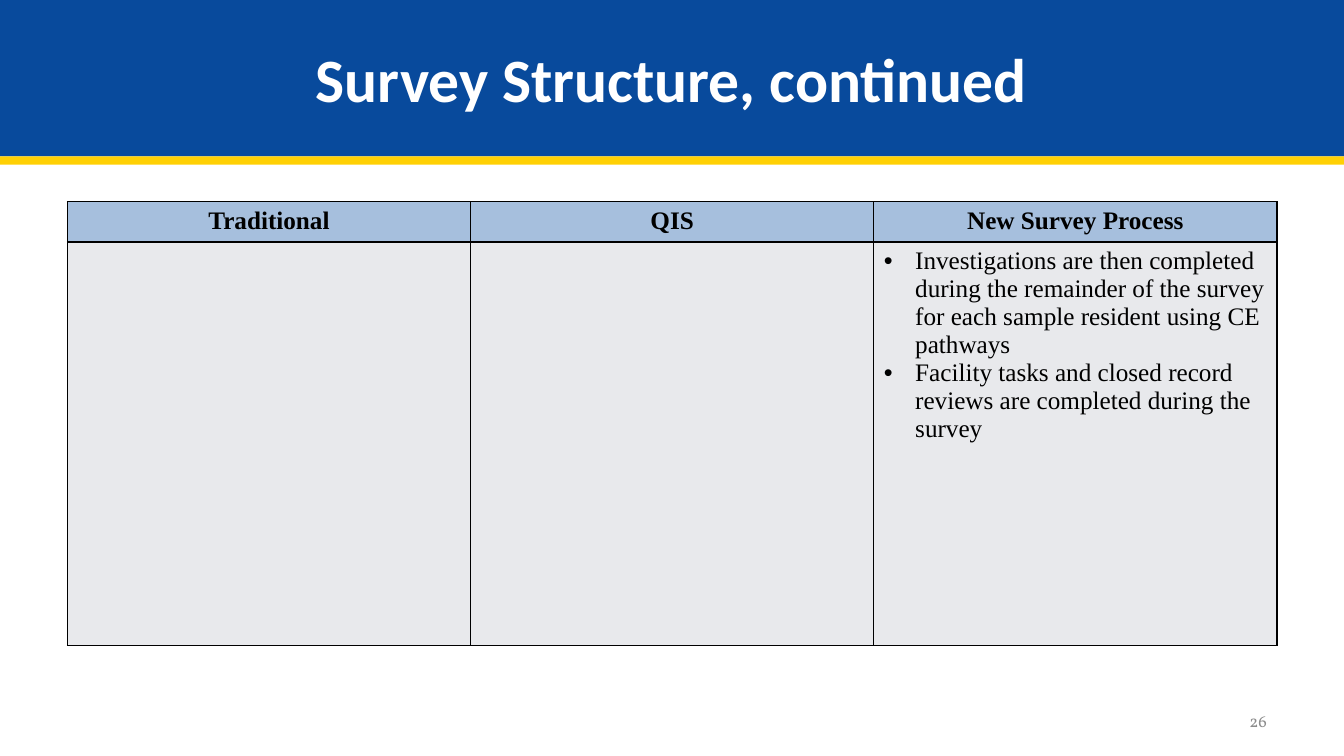
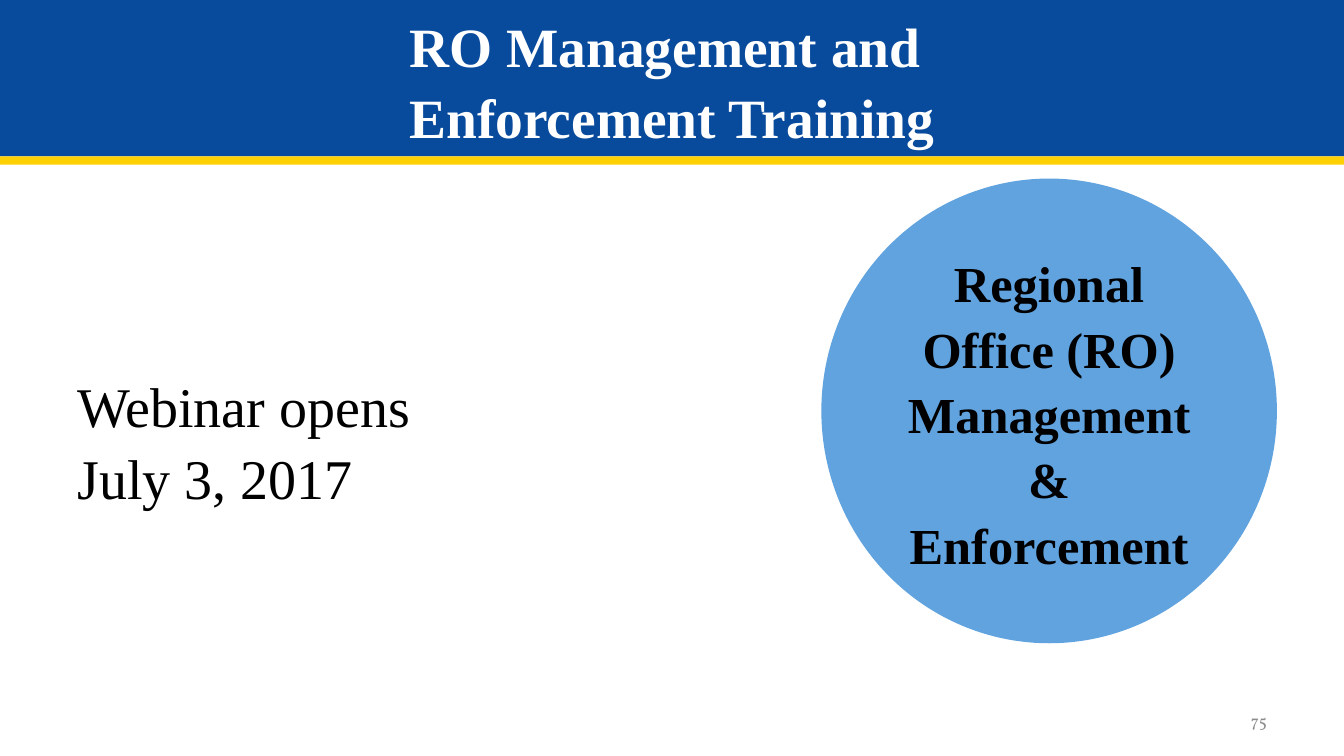
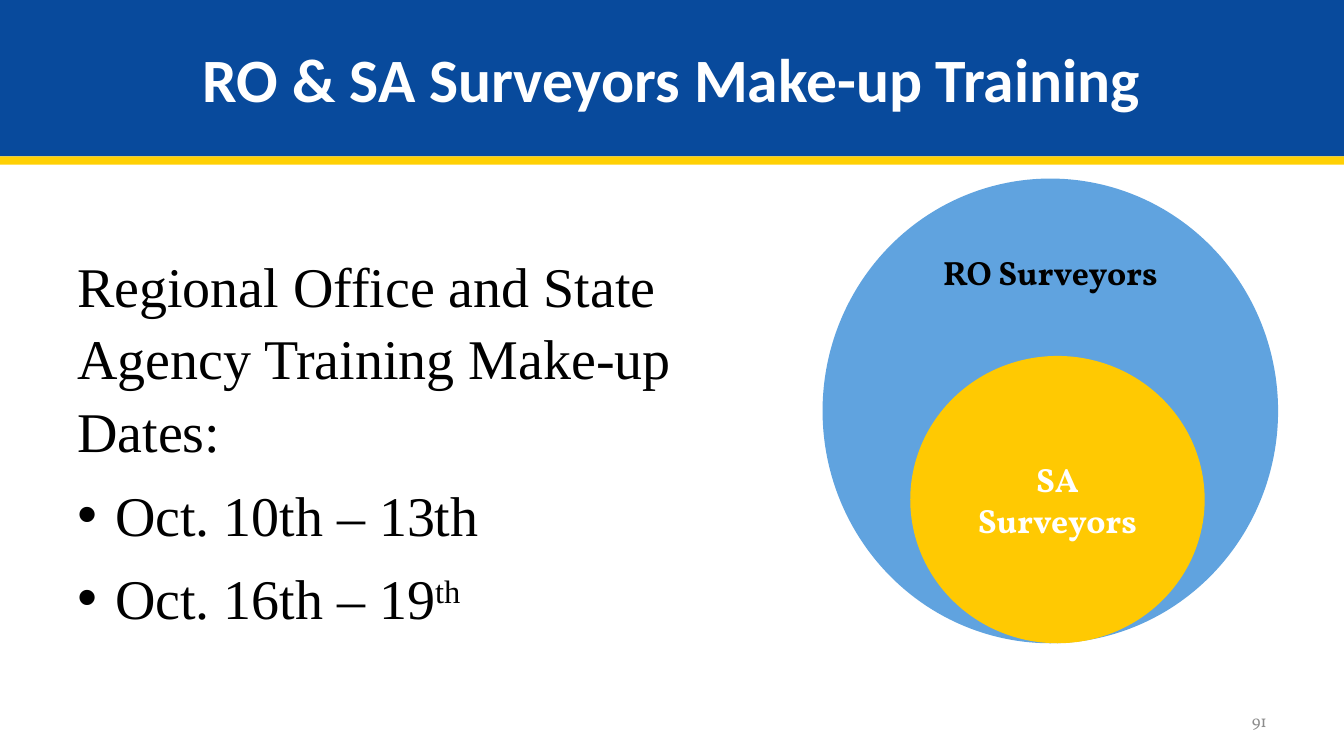
"""Build three survey training slides with a shared title band and page number."""
from lxml.etree import SubElement
from pptx import Presentation
from pptx.dml.color import RGBColor
from pptx.enum.shapes import MSO_SHAPE as Preset
from pptx.enum.text import MSO_ANCHOR as Anchor, PP_ALIGN as Align
from pptx.oxml.ns import qn
from pptx.util import Cm, Pt

BLUE = RGBColor(0x08, 0x4A, 0x9C)
GOLD = RGBColor(0xFF, 0xD0, 0x04)
AMBER = RGBColor(0xFF, 0xC9, 0x02)
SKY = RGBColor(0x60, 0xA3, 0xDF)
HEADER = RGBColor(0xA6, 0xBF, 0xDD)
PALE = RGBColor(0xE8, 0xE9, 0xEC)
GRAY = RGBColor(0x8C, 0x8C, 0x8C)
BLACK = RGBColor(0, 0, 0)
WHITE = RGBColor(0xFF, 0xFF, 0xFF)

SERIF, SANS, BOOK = "Times New Roman", "Calibri", "Vollkorn"
SLIDE_WIDTH, SLIDE_HEIGHT = 33.87, 19.05
MARGIN, TOP = 1.7, 5.08
BAND_HEIGHT, STRIPE_HEIGHT = 3.94, 0.21
BODY_HEIGHT = 11.94
NUMBER_BOX = (24.28, 17.65, 7.9, 1.02)
COLUMN_WIDTH, ROW_HEIGHTS = 10.16, (1.02, 10.16)

TITLE_SANS = dict(name=SANS, size=Pt(44), bold=True)
TITLE_SERIF = dict(name=SERIF, size=Pt(39.6), bold=True)
BODY = dict(name=SERIF, size=Pt(40))
CELL = dict(name=SERIF, size=Pt(18))
NUMBER = dict(name=BOOK, size=Pt(12))
RING = dict(name=BOOK, size=Pt(24), bold=True)
OFFICE = dict(name=SERIF, size=Pt(36), bold=True)

TABLE = [
    ("Traditional", "QIS", "New Survey Process"),
    ([], [], [
        "Investigations are then completed during the remainder of the survey "
        "for each sample resident using CE pathways",
        "Facility tasks and closed record reviews are completed during the survey",
    ]),
]

SLIDES = [
    dict(title="Survey Structure, continued", style=TITLE_SANS, number="26", table=TABLE),
    dict(
        title="RO Management and \nEnforcement Training", style=TITLE_SERIF, number="75",
        body=["Webinar opens \nJuly 3, 2017"], body_width=30.48,
        circles=[
            ("Regional Office (RO)\nManagement & Enforcement", (20.7, 4.5, 11.48, 11.71),
             SKY, BLACK, OFFICE, Anchor.MIDDLE),
        ],
    ),
    dict(
        title="RO & SA Surveyors Make-up Training", style=TITLE_SANS, number="91",
        body=["Regional Office and State Agency Training Make-up Dates:"], body_width=18.42,
        dates=[("Oct. 10th – 13th", ""), ("Oct. 16th – 19", "th")],
        circles=[
            ("RO Surveyors", (20.73, 4.5, 11.48, 11.71), SKY, BLACK, RING, Anchor.TOP),
            ("SA Surveyors", (22.94, 8.97, 7.42, 7.24), AMBER, WHITE, RING, Anchor.MIDDLE),
        ],
    ),
]


def box(values):
    return [Cm(value) for value in values]


def format_paragraph(paragraph, style, color, align=Align.LEFT, spacing=None):
    paragraph.alignment = align
    if spacing:
        paragraph.line_spacing = spacing
    for run in paragraph.runs:
        for key, value in style.items():
            setattr(run.font, key, value)
        run.font.color.rgb = color


def add_bullet(paragraph, indent):
    properties = paragraph._p.get_or_add_pPr()
    properties.set("marL", str(Cm(indent)))
    properties.set("indent", str(-Cm(indent)))
    SubElement(properties, qn("a:buFont"), typeface="Arial")
    SubElement(properties, qn("a:buChar"), char="•")


def next_paragraph(frame, index):
    return frame.add_paragraph() if index else frame.paragraphs[0]


def write(frame, text, style, color, align, anchor=Anchor.MIDDLE):
    frame.word_wrap = True
    frame.vertical_anchor = anchor
    frame.paragraphs[0].text = text
    spacing = 1.08 if style["name"] == SERIF else None
    format_paragraph(frame.paragraphs[0], style, color, align, spacing)


def add_filled(slide, preset, place, color):
    shape = slide.shapes.add_shape(preset, *box(place))
    shape.shadow.inherit = False
    shape.fill.solid()
    shape.fill.fore_color.rgb = color
    shape.line.fill.background()
    return shape


def add_frame(slide, title, style, number):
    add_filled(slide, Preset.RECTANGLE, (0, BAND_HEIGHT, SLIDE_WIDTH, STRIPE_HEIGHT), GOLD)
    band = slide.shapes.title
    band.left, band.top, band.width, band.height = box((0, 0, SLIDE_WIDTH, BAND_HEIGHT))
    band.fill.solid()
    band.fill.fore_color.rgb = BLUE
    write(band.text_frame, title, style, WHITE, Align.CENTER)
    number_box = slide.shapes.add_textbox(*box(NUMBER_BOX))
    write(number_box.text_frame, number, NUMBER, GRAY, Align.RIGHT)


def add_borders(cell):
    properties = cell._tc.get_or_add_tcPr()
    for position, side in enumerate(("a:lnL", "a:lnR", "a:lnT", "a:lnB")):
        line = properties.makeelement(qn(side), {"w": str(Pt(1))})
        fill = SubElement(line, qn("a:solidFill"))
        SubElement(fill, qn("a:srgbClr"), val=str(BLACK))
        properties.insert(position, line)


def add_survey_table(slide, rows):
    columns = len(rows[0])
    place = (MARGIN, TOP, COLUMN_WIDTH * columns, sum(ROW_HEIGHTS))
    table = slide.shapes.add_table(len(rows), columns, *box(place)).table
    for column in table.columns:
        column.width = Cm(COLUMN_WIDTH)
    for row, height in zip(table.rows, ROW_HEIGHTS):
        row.height = Cm(height)
    for cell, content in zip(table.iter_cells(), [*rows[0], *rows[1]]):
        is_header = isinstance(content, str)
        cell.fill.solid()
        cell.fill.fore_color.rgb = HEADER if is_header else PALE
        add_borders(cell)
        for index, text in enumerate([content] if is_header else content):
            paragraph = next_paragraph(cell.text_frame, index)
            paragraph.text = text
            if not is_header:
                add_bullet(paragraph, 0.79)
            align = Align.CENTER if is_header else Align.LEFT
            format_paragraph(paragraph, {**CELL, "bold": is_header}, BLACK, align)


def add_body(slide, texts, width, dates):
    frame = slide.shapes.add_textbox(*box((MARGIN, TOP, width, BODY_HEIGHT))).text_frame
    for text in texts:
        write(frame, text, BODY, BLACK, Align.LEFT)
    for text, suffix in dates:
        paragraph = frame.add_paragraph()
        paragraph.text = text
        if suffix:
            run = paragraph.add_run()
            run.text = suffix
            run._r.get_or_add_rPr().set("baseline", "30000")
        add_bullet(paragraph, 0.95)
        paragraph.space_before = Pt(8)
        format_paragraph(paragraph, BODY, BLACK, spacing=1.08)


def main():
    presentation = Presentation()
    presentation.slide_width, presentation.slide_height = box((SLIDE_WIDTH, SLIDE_HEIGHT))
    title_only = presentation.slide_layouts[5]
    for content in SLIDES:
        slide = presentation.slides.add_slide(title_only)
        add_frame(slide, content["title"], content["style"], content["number"])
        if "table" in content:
            add_survey_table(slide, content["table"])
        if "body" in content:
            add_body(slide, content["body"], content["body_width"], content.get("dates", []))
        for text, place, fill, color, style, anchor in content.get("circles", []):
            circle = add_filled(slide, Preset.FLOWCHART_CONNECTOR, place, fill)
            write(circle.text_frame, text, style, color, Align.CENTER, anchor)
    presentation.save("out.pptx")


if __name__ == "__main__":
    main()
